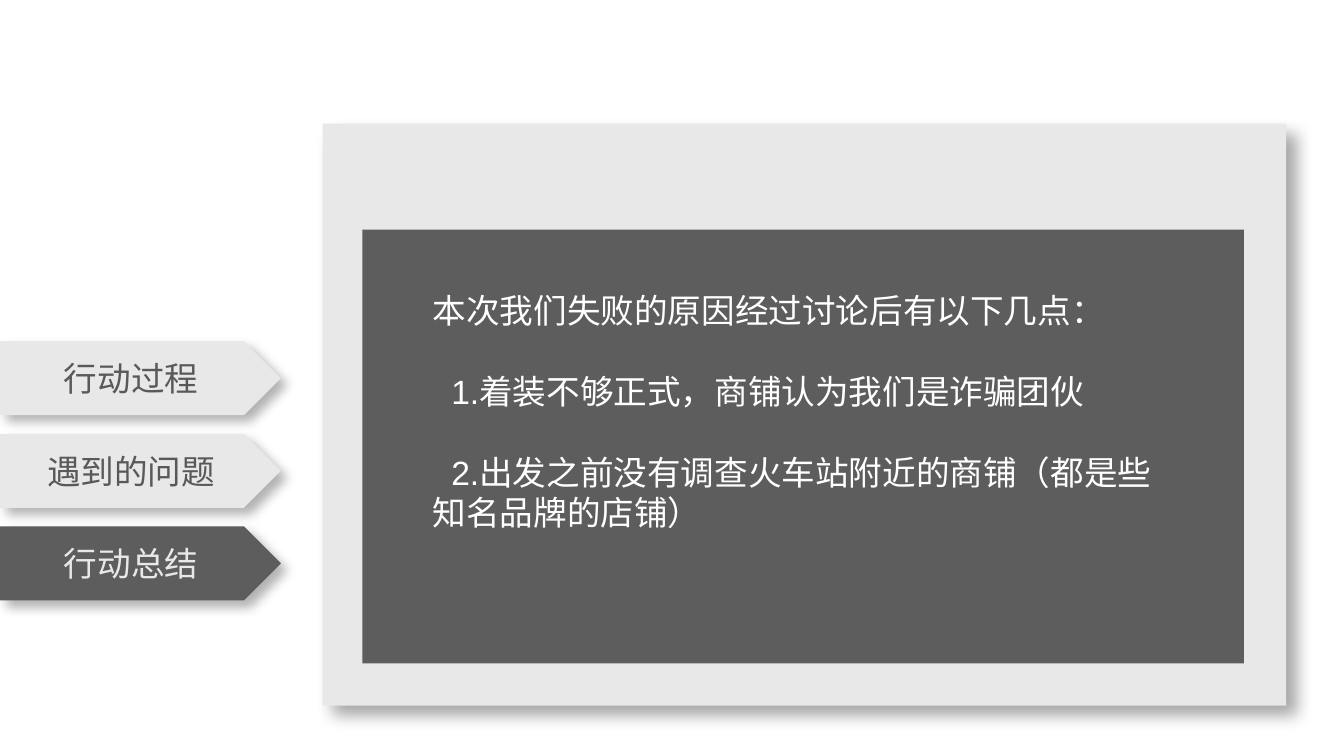
import pptx
import pptx.dml.color
import pptx.enum.shapes
import pptx.enum.text
import pptx.oxml
import pptx.oxml.ns
import pptx.util

Cm = pptx.util.Cm
Pt = pptx.util.Pt
RGBColor = pptx.dml.color.RGBColor
Shape = pptx.enum.shapes.MSO_SHAPE

LIGHT = RGBColor(0xE8, 0xE8, 0xE8)
DARK = RGBColor(0x5D, 0x5D, 0x5D)
TAB_TEXT = RGBColor(0x59, 0x59, 0x59)
WHITE = RGBColor(0xFF, 0xFF, 0xFF)


class SlideBuilder:
    text_size = Pt(18)
    tab_font = "DejaVu Sans"
    body_font = "Arial"

    def __init__(self, page):
        self.page = page

    def style(self, para, font, color):
        para.font.size = self.text_size
        para.font.name = font
        para.font.color.rgb = color

    def shadow(self, shape, opacity, blur, distance):
        """Cast a black shadow to the lower right; blur and distance in points."""
        effects = shape._element.spPr.find(pptx.oxml.ns.qn("a:effectLst"))
        effects.append(pptx.oxml.parse_xml(
            f'<a:outerShdw {pptx.oxml.ns.nsdecls("a")} blurRad="{Pt(blur)}" '
            f'dist="{Pt(distance)}" dir="2700000" algn="tl" rotWithShape="0">'
            f'<a:srgbClr val="000000"><a:alpha val="{opacity * 1000}"/></a:srgbClr>'
            '</a:outerShdw>'))

    def block(self, kind, left, top, width, height, fill):
        shape = self.page.shapes.add_shape(kind, Cm(left), Cm(top), Cm(width), Cm(height))
        shape.shadow.inherit = False
        shape.fill.solid()
        shape.fill.fore_color.rgb = fill
        shape.line.fill.background()
        return shape

    def tab(self, top, label, fill, color):
        shape = self.block(Shape.PENTAGON, 0, top, 5.31, 1.4, fill)
        self.shadow(shape, 30, 6, 5)
        shape.text_frame.vertical_anchor = pptx.enum.text.MSO_ANCHOR.MIDDLE
        para = shape.text_frame.paragraphs[0]
        para.text = label
        para.alignment = pptx.enum.text.PP_ALIGN.CENTER
        self.style(para, self.tab_font, color)

    def body(self, left, top, width, height, heading, points):
        box = self.page.shapes.add_textbox(Cm(left), Cm(top), Cm(width), Cm(height))
        frame = box.text_frame
        frame.word_wrap = True
        frame.paragraphs[0].text = heading
        for point in points:
            para = frame.add_paragraph()
            para.text = point
            para.space_before = Pt(21.7)
            para._p.get_or_add_pPr().set("indent", str(Cm(0.35)))
        for para in frame.paragraphs:
            self.style(para, self.body_font, WHITE)


def main():
    deck = pptx.Presentation()
    deck.slide_width, deck.slide_height = Cm(25.4), Cm(14.29)
    builder = SlideBuilder(deck.slides.add_slide(deck.slide_layouts[6]))

    # Content panel
    panel = builder.block(Shape.RECTANGLE, 6.1, 2.34, 18.21, 11, LIGHT)
    builder.shadow(panel, 35, 9, 8)
    builder.block(Shape.RECTANGLE, 6.85, 4.34, 16.66, 8.2, DARK)

    # Navigation tabs, the last one being current
    labels = ["行动过程", "遇到的问题", "行动总结"]
    for index, label in enumerate(labels):
        current = index == len(labels) - 1
        fill, color = (DARK, LIGHT) if current else (LIGHT, TAB_TEXT)
        builder.tab(6.45 + index * 1.75, label, fill, color)

    # Reasons
    builder.body(7.93, 5.36, 14.48, 4.88, "本次我们失败的原因经过讨论后有以下几点：", [
        "1.着装不够正式，商铺认为我们是诈骗团伙",
        "2.出发之前没有调查火车站附近的商铺（都是些知名品牌的店铺）",
    ])

    deck.save("out.pptx")


if __name__ == "__main__":
    main()
